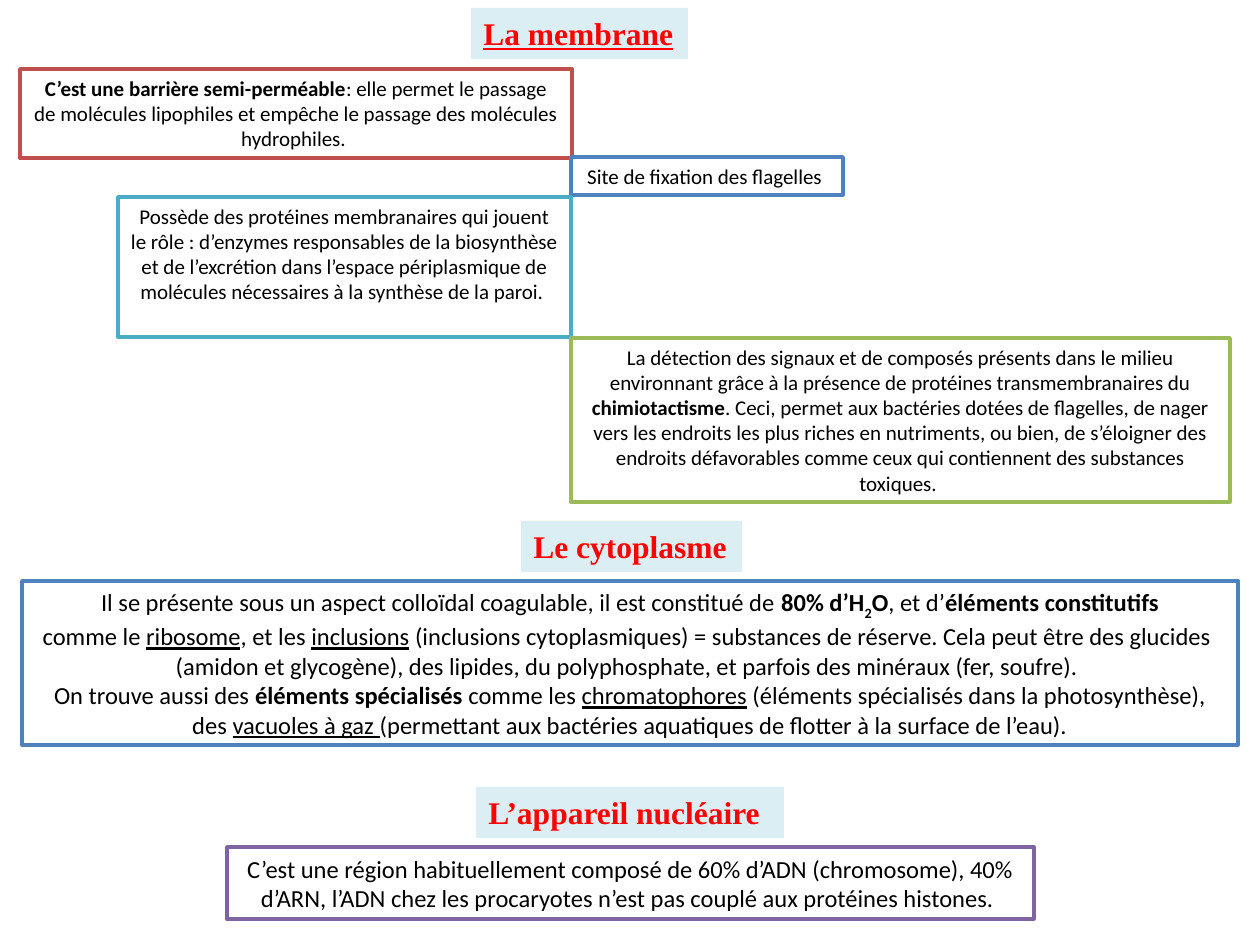
import pptx
import pptx.dml.color
import pptx.enum.shapes
import pptx.enum.text
import pptx.util

EMU_PER_PX = 914400 / 126
COLORS = {
    "white": "FFFFFF", "black": "000000", "heading": "FF0000",
    "pale": "DBEEF4", "red": "C0504D", "blue": "4F81BD",
    "teal": "4BACC6", "green": "9BBB59", "purple": "8064A2",
}
HEADINGS = [
    ((471, 8, 217, 51), "La membrane", True),
    ((521, 521, 221, 51), "Le cytoplasme", False),
    ((476, 787, 308, 51), "L’appareil nucléaire\u00a0", False),
]
MEMBRANE_NOTES = [
    ((20, 69, 552, 89), "red", [
        ("C’est une barrière semi-perméable", "bold"),
        (": elle permet le passage de molécules lipophiles et empêche "
         "le passage des molécules hydrophiles. ", ""),
    ]),
    ((571, 157, 272, 38), "blue", [("Site de fixation des flagelles ", "")]),
    ((118, 197, 453, 140), "teal", [
        ("Possède des protéines membranaires qui jouent le rôle : d’enzymes "
         "responsables de la biosynthèse et de l’excrétion dans l’espace "
         "périplasmique de molécules nécessaires à la synthèse de la paroi. ", ""),
    ]),
    ((571, 338, 659, 164), "green", [
        ("La détection des signaux et de composés présents dans le milieu "
         "environnant grâce à la présence de protéines transmembranaires du ", ""),
        ("chimiotactisme", "bold"),
        (". Ceci, permet aux bactéries dotées de flagelles, de nager vers les "
         "endroits les plus riches en nutriments, ou bien, de s’éloigner des "
         "endroits défavorables comme ceux qui contiennent des substances "
         "toxiques. ", ""),
    ]),
]
CYTOPLASM = [
    [
        ("Il se présente sous un aspect colloïdal coagulable, il est constitué de ", ""),
        ("80% d’H", "bold"), ("2", "bold subscript"), ("O", "bold"),
        (", et d’", ""), ("éléments constitutifs", "bold"),
    ],
    [
        ("comme le ", ""), ("ribosome", "underline"), (", et les ", ""),
        ("inclusions", "underline"),
        (" (inclusions cytoplasmiques) = substances de réserve. "
         "Cela peut être des glucides ", ""),
    ],
    [("(amidon et glycogène), des lipides, du polyphosphate, "
      "et parfois des minéraux (fer, soufre). ", "")],
    [
        ("On trouve aussi des ", ""), ("éléments spécialisés ", "bold"),
        ("comme les ", ""), ("chromatophores", "underline"),
        (" (éléments spécialisés dans la photosynthèse), des ", ""),
        ("vacuoles à gaz ", "underline"),
        ("(permettant aux bactéries aquatiques de flotter à la surface de l’eau).", ""),
    ],
]
NUCLEAR = [[
    ("C’est une région habituellement composé de 60% d’ADN (chromosome), 40% "
     "d’ARN, l’ADN chez les procaryotes n’est pas couplé aux protéines histones. ", ""),
]]


def px(length):
    return pptx.util.Emu(round(length * EMU_PER_PX))


def color(name):
    return pptx.dml.color.RGBColor.from_string(COLORS[name])


def add_box(slide, bounds, fill, line=None):
    shape = slide.shapes.add_shape(
        pptx.enum.shapes.MSO_SHAPE.RECTANGLE, *map(px, bounds))
    shape.shadow.inherit = False
    shape.fill.solid()
    shape.fill.fore_color.rgb = color(fill)
    if line:
        shape.line.color.rgb = color(line)
        shape.line.width = pptx.util.Pt(2)
    else:
        shape.line.fill.background()
    return shape


def style_paragraph(paragraph, alignment, font_name, size, color_name):
    paragraph.alignment = alignment
    paragraph.font.name = font_name
    paragraph.font.size = pptx.util.Pt(size)
    paragraph.font.color.rgb = color(color_name)


def add_run(paragraph, text, style):
    run = paragraph.add_run()
    run.text = text
    if "bold" in style:
        run.font.bold = True
    if "underline" in style:
        run.font.underline = True
    if "subscript" in style:
        run._r.get_or_add_rPr().set("baseline", "-30000")


def add_heading(slide, bounds, text, underline):
    frame = add_box(slide, bounds, "pale").text_frame
    frame.word_wrap = False
    frame.vertical_anchor = pptx.enum.text.MSO_ANCHOR.TOP
    paragraph = frame.paragraphs[0]
    paragraph.text = text
    style_paragraph(paragraph, pptx.enum.text.PP_ALIGN.LEFT,
                    "Times New Roman", 18, "heading")
    paragraph.font.bold = True
    paragraph.font.underline = underline


def add_note(slide, bounds, line, paragraphs, size, anchor):
    frame = add_box(slide, bounds, "white", line).text_frame
    frame.word_wrap = True
    frame.vertical_anchor = anchor
    for index, runs in enumerate(paragraphs):
        paragraph = frame.add_paragraph() if index else frame.paragraphs[0]
        style_paragraph(paragraph, pptx.enum.text.PP_ALIGN.CENTER,
                        "Calibri", size, "black")
        for text, style in runs:
            add_run(paragraph, text, style)


def main():
    presentation = pptx.Presentation()
    presentation.slide_width = px(1260)
    presentation.slide_height = px(945)
    slide = presentation.slides.add_slide(presentation.slide_layouts[6])
    top = pptx.enum.text.MSO_ANCHOR.TOP
    middle = pptx.enum.text.MSO_ANCHOR.MIDDLE
    for heading in HEADINGS:
        add_heading(slide, *heading)
    for bounds, line, runs in MEMBRANE_NOTES:
        add_note(slide, bounds, line, [runs], 12, top)
    add_note(slide, (22, 581, 1216, 164), "blue", CYTOPLASM, 14, middle)
    add_note(slide, (227, 847, 807, 72), "purple", NUCLEAR, 14, middle)
    presentation.save("out.pptx")


if __name__ == "__main__":
    main()
